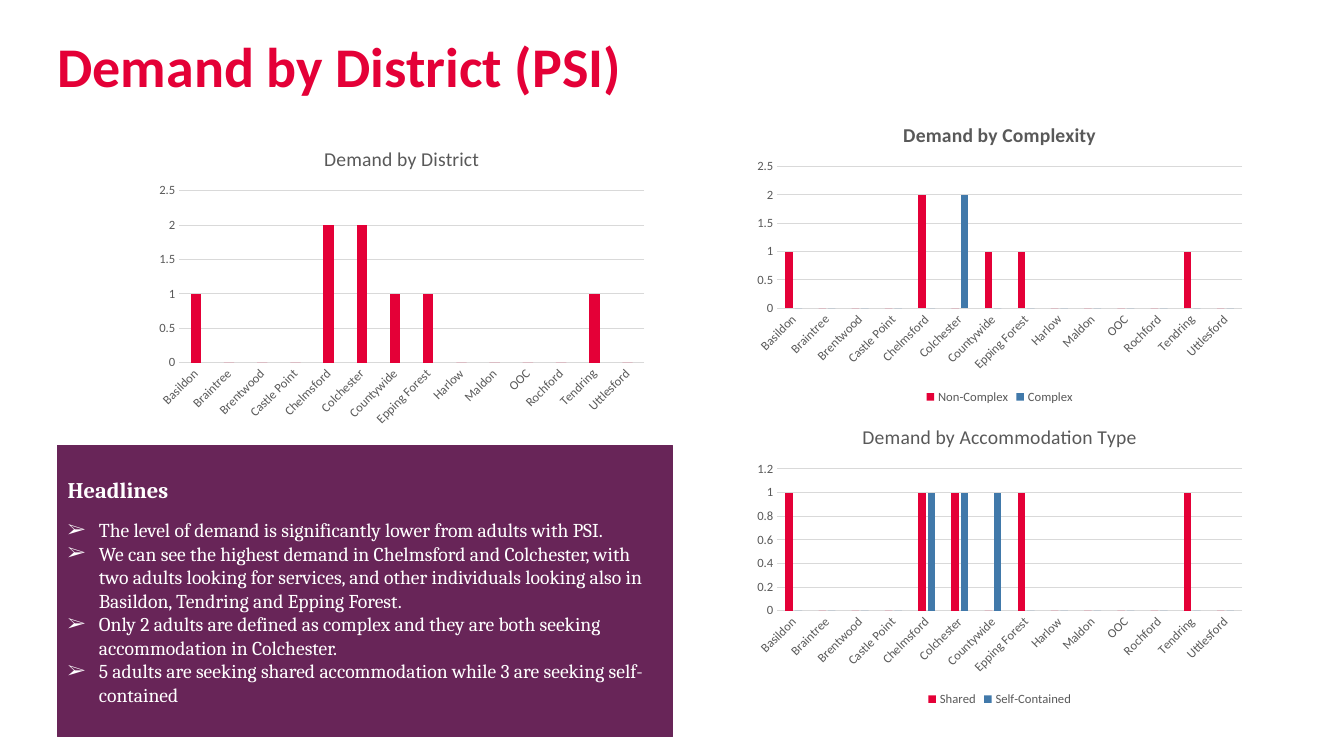
"""Build the slide on demand by district for adults with PSI."""
from dataclasses import dataclass

from lxml import etree
from pptx import Presentation
from pptx.chart.data import CategoryChartData
from pptx.dml.color import RGBColor
from pptx.enum.chart import XL_CHART_TYPE, XL_LEGEND_POSITION, XL_TICK_MARK
from pptx.enum.text import MSO_ANCHOR, MSO_AUTO_SIZE, PP_ALIGN
from pptx.oxml.ns import qn
from pptx.util import Emu, Inches, Pt

COLUMNS = XL_CHART_TYPE.COLUMN_CLUSTERED
BOTTOM = XL_LEGEND_POSITION.BOTTOM
NO_TICKS = XL_TICK_MARK.NONE
TOP, MIDDLE = MSO_ANCHOR.TOP, MSO_ANCHOR.MIDDLE
NO_FIT = MSO_AUTO_SIZE.NONE
LEFT = PP_ALIGN.LEFT

RED = RGBColor(0xE4, 0x00, 0x37)
BLUE = RGBColor(0x41, 0x79, 0xAA)
PURPLE = RGBColor(0x68, 0x25, 0x58)
WHITE = RGBColor(0xFF, 0xFF, 0xFF)
GREY = RGBColor(0x59, 0x59, 0x59)
PALE_GREY = RGBColor(0xD9, 0xD9, 0xD9)

SANS, SERIF = "Calibri", "Cambria"
SLIDE_WIDTH, SLIDE_HEIGHT = Inches(13.33), Inches(7.5)
BULLET_INDENT = Inches(0.31)

DISTRICTS = ("Basildon", "Braintree", "Brentwood", "Castle Point", "Chelmsford",
             "Colchester", "Countywide", "Epping Forest", "Harlow", "Maldon",
             "OOC", "Rochford", "Tendring", "Uttlesford")

HEADLINES = (
    "The level of demand is significantly lower from adults with PSI.",
    "We can see the highest demand in Chelmsford and Colchester, with two adults "
    "looking for services, and other individuals looking also in Basildon, "
    "Tendring and Epping Forest.",
    "Only 2 adults are defined as complex and they are both seeking "
    "accommodation in Colchester.",
    "5 adults are seeking shared accommodation while 3 are seeking self-contained",
)


@dataclass(frozen=True)
class Area:
    """A rectangle in percent of the slide's width and height."""
    left: float
    top: float
    width: float
    height: float

    def lengths(self) -> tuple[Emu, Emu, Emu, Emu]:
        """Return left, top, width and height as lengths."""
        return (Emu(int(SLIDE_WIDTH * self.left / 100)),
                Emu(int(SLIDE_HEIGHT * self.top / 100)),
                Emu(int(SLIDE_WIDTH * self.width / 100)),
                Emu(int(SLIDE_HEIGHT * self.height / 100)))


@dataclass(frozen=True)
class DemandChart:
    """A column chart with its demand counted by district."""
    title: str
    left: float
    top: float
    demand: dict[str, dict[str, int]]
    bold: bool = False


TITLE_AREA = Area(4.28, 4.13, 51.39, 11.33)
HEADLINES_AREA = Area(4.28, 58.93, 45.76, 38.53)
CHART_WIDTH, CHART_HEIGHT = 37.58, 40
RIGHT_COLUMN = 55.59

CHARTS = (
    DemandChart("Demand by Complexity", RIGHT_COLUMN, 14, {
        "Non-Complex": {"Basildon": 1, "Chelmsford": 2, "Countywide": 1,
                        "Epping Forest": 1, "Tendring": 1},
        "Complex": {"Colchester": 2}}, bold=True),
    DemandChart("Demand by Accommodation Type", RIGHT_COLUMN, 14 + CHART_HEIGHT, {
        "Shared": {"Basildon": 1, "Chelmsford": 1, "Colchester": 1,
                   "Epping Forest": 1, "Tendring": 1},
        "Self-Contained": {"Chelmsford": 1, "Colchester": 1, "Countywide": 1}}),
    DemandChart("Demand by District", 11.1, 17.2, {
        "Series 1": {"Basildon": 1, "Chelmsford": 2, "Colchester": 2,
                     "Countywide": 1, "Epping Forest": 1, "Tendring": 1}}),
)


def format_font(font, *, size: float, color: RGBColor, name: str = SANS,
                bold: bool = False) -> None:
    """Set the typeface, size, weight and colour of a font."""
    font.name, font.size, font.bold = name, Pt(size), bold
    font.color.rgb = color


def write(para, text: str, *, bullet: str = "", after: float = 0, **style) -> None:
    """Write a paragraph of one span, with or without a bullet."""
    para.alignment = LEFT
    para.space_before, para.space_after = Pt(0), Pt(after)
    span = para.add_run()
    span.text = text
    format_font(span.font, **style)
    properties = para._p.get_or_add_pPr()
    indent = BULLET_INDENT if bullet else 0
    properties.set("marL", str(indent))
    properties.set("indent", str(-indent))
    if bullet:
        etree.SubElement(properties, qn("a:buFont")).set("typeface", SERIF)
        etree.SubElement(properties, qn("a:buChar")).set("char", bullet)
    else:
        etree.SubElement(properties, qn("a:buNone"))


def place(box, area: Area, anchor):
    """Move a placeholder to an area and return its text frame."""
    box.left, box.top, box.width, box.height = area.lengths()
    frame = box.text_frame
    frame.auto_size, frame.word_wrap = NO_FIT, True
    frame.vertical_anchor = anchor
    return frame


def add_title(page) -> None:
    """Fill the title placeholder."""
    frame = place(page.shapes.title, TITLE_AREA, TOP)
    frame.margin_left = frame.margin_right = frame.margin_top = frame.margin_bottom = 0
    write(frame.paragraphs[0], "Demand by District (PSI)",
          size=40, color=RED, bold=True)


def add_headlines(page) -> None:
    """Fill the body placeholder with the list of headlines."""
    box = page.placeholders[1]
    frame = place(box, HEADLINES_AREA, MIDDLE)
    box.fill.solid()
    box.fill.fore_color.rgb = PURPLE
    box.line.color.rgb, box.line.width = PURPLE, Pt(1)
    write(frame.paragraphs[0], "Headlines", after=11,
          size=16, color=WHITE, name=SERIF, bold=True)
    for headline in HEADLINES:
        write(frame.add_paragraph(), headline, bullet="➢",
              size=14, color=WHITE, name=SERIF)


def format_axes(chart) -> None:
    """Give both axes small grey labels and pale lines."""
    districts, counts = chart.category_axis, chart.value_axis
    for axis in (districts, counts):
        axis.major_tick_mark = axis.minor_tick_mark = NO_TICKS
        format_font(axis.tick_labels.font, size=9, color=GREY)
    counts.has_major_gridlines = True
    counts.format.line.fill.background()
    for line in (districts.format.line, counts.major_gridlines.format.line):
        line.color.rgb, line.width = PALE_GREY, Pt(0.75)
    labels = chart.element.find(f".//{qn('c:catAx')}/{qn('c:txPr')}/{qn('a:bodyPr')}")
    labels.set("rot", str(-45 * 60000))


def add_demand_chart(page, item: DemandChart) -> None:
    """Draw one column chart of demand by district."""
    data = CategoryChartData()
    data.categories = DISTRICTS
    for name, counts in item.demand.items():
        data.add_series(name, [counts.get(district, 0) for district in DISTRICTS])
    area = Area(item.left, item.top, CHART_WIDTH, CHART_HEIGHT)
    chart = page.shapes.add_chart(COLUMNS, *area.lengths(), data).chart
    format_font(chart.font, size=10, color=GREY)
    chart.has_title = True
    span = chart.chart_title.text_frame.paragraphs[0].add_run()
    span.text = item.title
    format_font(span.font, size=14, color=GREY, bold=item.bold)
    format_axes(chart)
    plot = chart.plots[0]
    plot.gap_width, plot.overlap, plot.vary_by_categories = 219, -27, False
    for series, color in zip(plot.series, (RED, BLUE)):
        series.format.fill.solid()
        series.format.fill.fore_color.rgb = color
    chart.has_legend = len(item.demand) > 1
    if chart.has_legend:
        chart.legend.position = BOTTOM
        chart.legend.include_in_layout = False
        format_font(chart.legend.font, size=9, color=GREY)


def main() -> None:
    """Build and save the deck."""
    deck = Presentation()
    deck.slide_width, deck.slide_height = SLIDE_WIDTH, SLIDE_HEIGHT
    page = deck.slides.add_slide(deck.slide_layouts[1])
    add_title(page)
    add_headlines(page)
    for item in CHARTS:
        add_demand_chart(page, item)
    deck.save("out.pptx")


if __name__ == "__main__":
    main()
